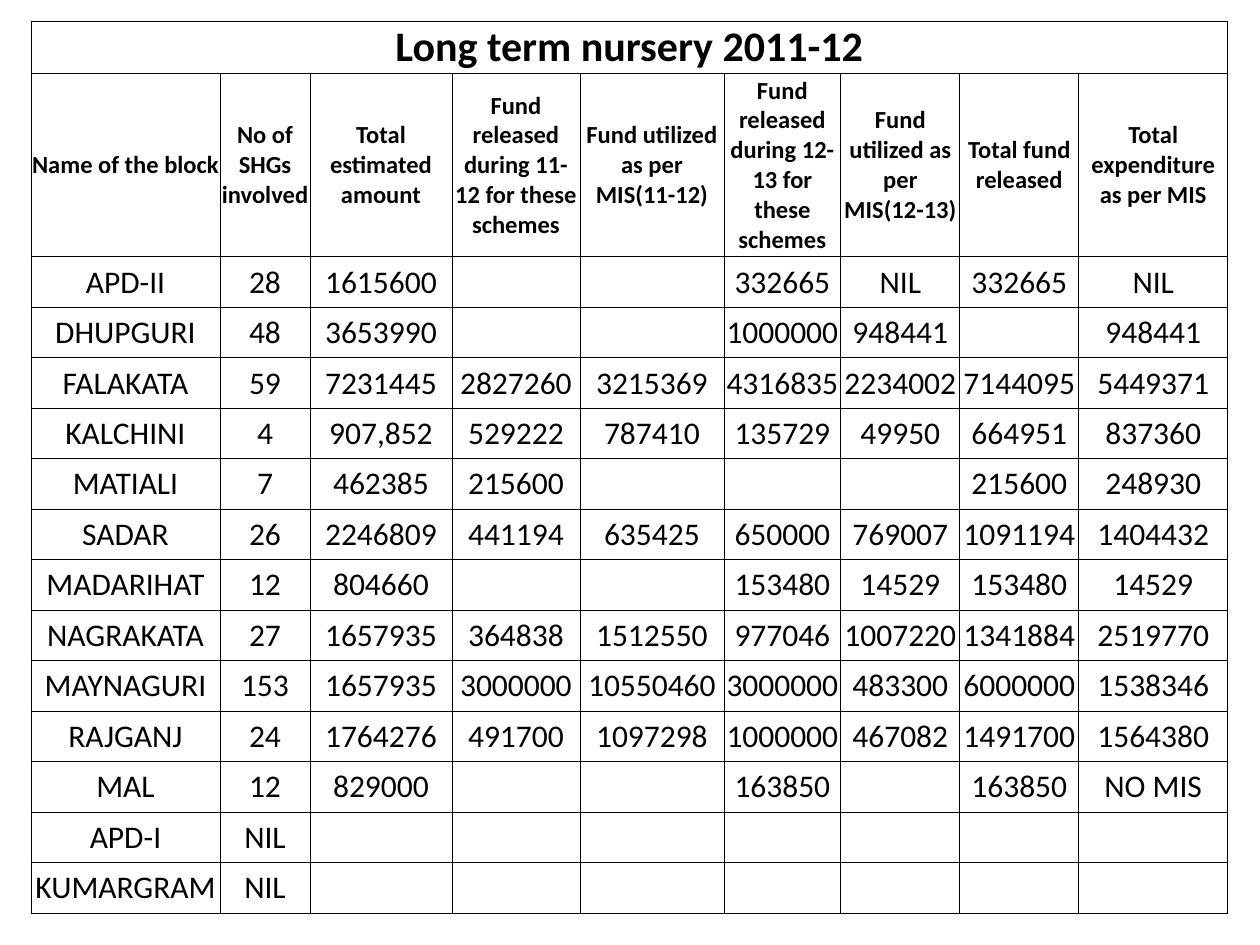
from lxml import etree
from pptx import Presentation
from pptx.dml.color import RGBColor
from pptx.enum.text import MSO_ANCHOR, PP_ALIGN
from pptx.oxml.ns import qn
from pptx.util import Emu, Pt

SCALE = 914400 / 126
BLACK = RGBColor(0, 0, 0)
WHITE = RGBColor(255, 255, 255)
CENTER = PP_ALIGN.CENTER
MIDDLE = MSO_ANCHOR.MIDDLE

TITLE = "Long term nursery 2011-12"
HEADINGS = [
    "Name of the block",
    "No of SHGs involved",
    "Total estimated amount",
    "Fund released during 11-12 for these schemes",
    "Fund utilized as per MIS(11-12)",
    "Fund released during 12-13 for these schemes",
    "Fund utilized as per MIS(12-13)",
    "Total fund released",
    "Total expenditure as per MIS",
]
BLOCKS = [
    ["APD-II", "28", "1615600", "", "", "332665", "NIL", "332665", "NIL"],
    ["DHUPGURI", "48", "3653990", "", "", "1000000", "948441", "", "948441"],
    ["FALAKATA", "59", "7231445", "2827260", "3215369", "4316835", "2234002", "7144095", "5449371"],
    ["KALCHINI", "4", "907,852", "529222", "787410", "135729", "49950", "664951", "837360"],
    ["MATIALI", "7", "462385", "215600", "", "", "", "215600", "248930"],
    ["SADAR", "26", "2246809", "441194", "635425", "650000", "769007", "1091194", "1404432"],
    ["MADARIHAT", "12", "804660", "", "", "153480", "14529", "153480", "14529"],
    ["NAGRAKATA", "27", "1657935", "364838", "1512550", "977046", "1007220", "1341884", "2519770"],
    ["MAYNAGURI", "153", "1657935", "3000000", "10550460", "3000000", "483300", "6000000", "1538346"],
    ["RAJGANJ", "24", "1764276", "491700", "1097298", "1000000", "467082", "1491700", "1564380"],
    ["MAL", "12", "829000", "", "", "163850", "", "163850", "NO MIS"],
    ["APD-I", "NIL", "", "", "", "", "", "", ""],
    ["KUMARGRAM", "NIL", "", "", "", "", "", "", ""],
]
COLUMN_WIDTHS = [189, 90, 142, 128, 144, 117, 119, 119, 149]
TITLE_HEIGHT = 51
HEADING_HEIGHT = 183
BODY_HEIGHT = 657


def px(length):
    return Emu(round(length * SCALE))


def split_evenly(total, count):
    edges = [round(total * index / count) for index in range(count + 1)]
    return [end - start for start, end in zip(edges, edges[1:])]


class SlideBuilder:
    font = "Calibri"
    border_width = Pt(0.5)

    def __init__(self, presentation):
        self.slide = presentation.slides.add_slide(presentation.slide_layouts[6])

    def table(self, left, top, widths, heights):
        shape = self.slide.shapes.add_table(
            len(heights), len(widths), px(left), px(top), px(sum(widths)), px(sum(heights))
        )
        table = shape.table
        table.first_row = False
        table.horz_banding = False
        for column, width in zip(table.columns, widths):
            column.width = px(width)
        for row, height in zip(table.rows, heights):
            row.height = px(height)
        return table

    def cell(self, cell, text, size, bold):
        cell.margin_left = cell.margin_right = cell.margin_top = px(1)
        cell.margin_bottom = 0
        cell.vertical_anchor = MIDDLE
        cell.fill.solid()
        cell.fill.fore_color.rgb = WHITE
        self.borders(cell)
        if text:
            paragraph = cell.text_frame.paragraphs[0]
            paragraph.alignment = CENTER
            run = paragraph.add_run()
            run.text = text
            run.font.name = self.font
            run.font.size = Pt(size)
            run.font.bold = bold
            run.font.color.rgb = BLACK

    def borders(self, cell):
        properties = cell._tc.get_or_add_tcPr()
        for index, side in enumerate(("a:lnL", "a:lnR", "a:lnT", "a:lnB")):
            line = etree.Element(qn(side), w=str(self.border_width))
            fill = etree.SubElement(line, qn("a:solidFill"))
            etree.SubElement(fill, qn("a:srgbClr"), val=str(BLACK))
            properties.insert(index, line)


def main():
    presentation = Presentation()
    presentation.slide_width = px(1260)
    presentation.slide_height = px(945)
    builder = SlideBuilder(presentation)

    heights = [TITLE_HEIGHT, HEADING_HEIGHT] + split_evenly(BODY_HEIGHT, len(BLOCKS))
    table = builder.table(31, 21, COLUMN_WIDTHS, heights)
    title_row = [TITLE] + [""] * (len(HEADINGS) - 1)
    styles = [(24, True), (14, True)] + [(18, False)] * len(BLOCKS)
    for row, texts, (size, bold) in zip(table.rows, [title_row, HEADINGS] + BLOCKS, styles):
        for cell, text in zip(row.cells, texts):
            builder.cell(cell, text, size, bold)
    table.cell(0, 0).merge(table.cell(0, len(HEADINGS) - 1))

    presentation.save("out.pptx")


if __name__ == "__main__":
    main()
